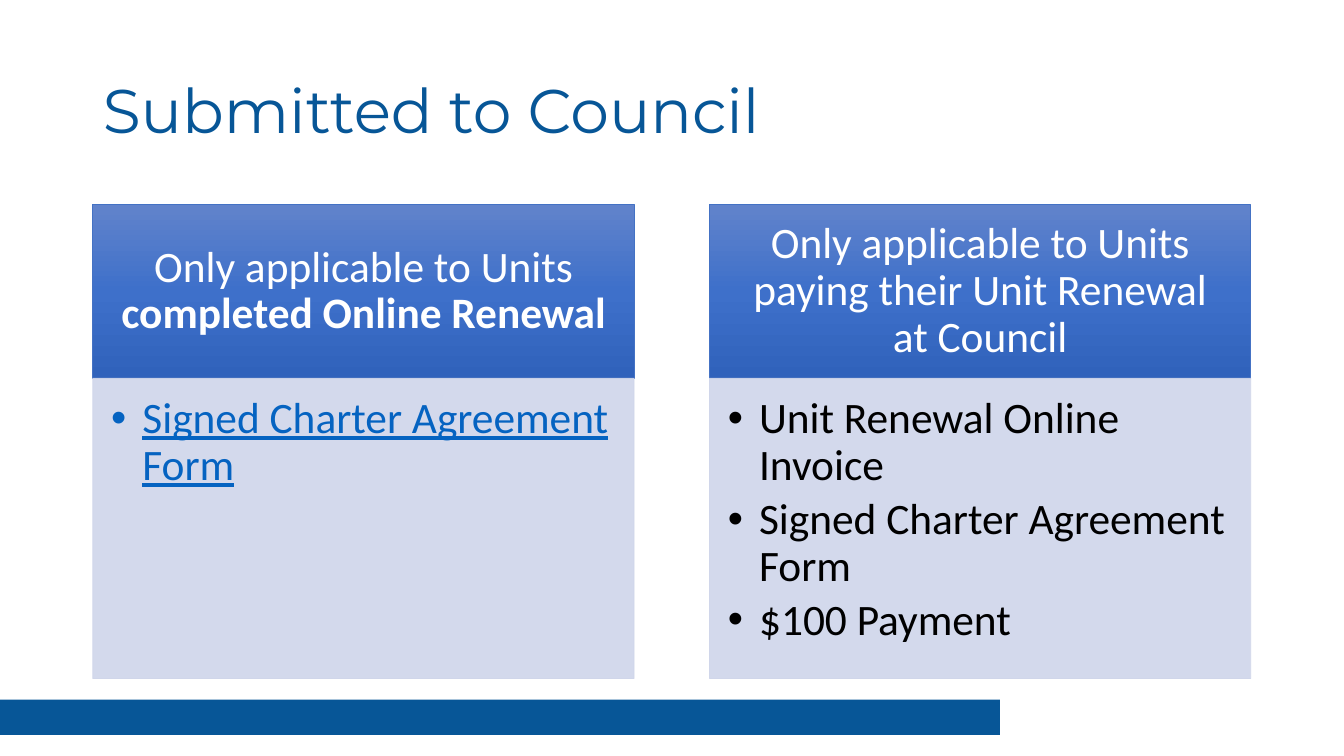
from copy import deepcopy
from dataclasses import dataclass

from lxml import etree
from pptx import Presentation
from pptx import util as u
from pptx.dml.color import RGBColor
from pptx.enum import shapes, text
from pptx.oxml.ns import qn

COLORS = {
    "brand": "075697", "white": "FFFFFF", "black": "000000", "link": "0563C1",
    "head_top": "6183CB", "head_mid": "3E70CA", "head_end": "3062BB",
    "head_line": "4472C4", "panel": "CFD5EA",
}
COLUMN_WIDTH, COLUMN_TOP = 13.64, 5.16
HEAD_HEIGHT, PANEL_HEIGHT = 4.37, 7.57
INDENT = 0.79


@dataclass
class Column:
    left: float
    head_idx: int
    list_idx: int
    heading: str
    items: list[str]
    strong: str = ""
    color: str = "black"
    underline: bool = False


COLUMNS = [
    Column(2.34, 1, 2, "Only applicable to Units ", ["Signed Charter Agreement Form"],
           strong="completed Online Renewal", color="link", underline=True),
    Column(17.88, 3, 4, "Only applicable to Units paying their Unit Renewal at Council",
           ["Unit Renewal Online Invoice", "Signed Charter Agreement Form", "$100 Payment"]),
]


def rgb(name: str) -> RGBColor:
    return RGBColor.from_string(COLORS[name])


def place(sp, left: float, top: float, width: float, height: float) -> None:
    sp.left, sp.top, sp.width, sp.height = map(u.Cm, (left, top, width, height))


def set_frame(tf, anchor, insets: tuple) -> None:
    tf.word_wrap = True
    tf.auto_size = text.MSO_AUTO_SIZE.NONE
    tf.vertical_anchor = anchor
    tf.margin_left, tf.margin_top, tf.margin_right, tf.margin_bottom = map(u.Cm, insets)


def format_paragraph(p, align, color: str, size: int = 31, font: str = "Calibri") -> None:
    p.alignment = align
    p.line_spacing = 0.9
    p.space_before = u.Pt(0)
    for r in p.runs:
        r.font.name, r.font.size = font, u.Pt(size)
        r.font.color.rgb = rgb(color)
        r.font.bold = False


def set_bullet(p) -> None:
    pPr = p._p.get_or_add_pPr()
    pPr.set("marL", str(u.Cm(INDENT)))
    pPr.set("indent", str(-u.Cm(INDENT)))
    etree.SubElement(pPr, qn("a:buFont")).set("typeface", "Arial")
    etree.SubElement(pPr, qn("a:buChar")).set("char", "•")


def fill_heading(sp) -> None:
    sp.fill.gradient()
    sp.fill.gradient_angle = 270
    stops = sp._element.spPr.find(qn("a:gradFill")).find(qn("a:gsLst"))
    stops.insert(1, deepcopy(stops[0]))
    names = ("head_top", "head_mid", "head_end")
    for stop, name, position in zip(sp.fill.gradient_stops, names, (0, 0.5, 1)):
        stop.color.rgb = rgb(name)
        stop.position = position
    sp.line.color.rgb = rgb("head_line")
    sp.line.width = u.Pt(0.5)


def fill_panel(sp) -> None:
    sp.fill.solid()
    sp.fill.fore_color.rgb = rgb("panel")
    sp.line.color.rgb = rgb("panel")
    sp.line.width = u.Pt(0.5)
    for color in sp._element.spPr.iter(qn("a:srgbClr")):
        etree.SubElement(color, qn("a:alpha")).set("val", "90000")


def draw_column(s, column: Column) -> None:
    # Heading
    sp = s.placeholders[column.head_idx]
    place(sp, column.left, COLUMN_TOP, COLUMN_WIDTH, HEAD_HEIGHT)
    fill_heading(sp)
    tf = sp.text_frame
    set_frame(tf, text.MSO_ANCHOR.MIDDLE, (0.61, 0.36, 0.61, 0.36))
    tf.text = column.heading
    p = tf.paragraphs[0]
    if column.strong:
        p.add_run().text = column.strong
    format_paragraph(p, text.PP_ALIGN.CENTER, "white")
    if column.strong:
        p.runs[-1].font.bold = True

    # List
    sp = s.placeholders[column.list_idx]
    place(sp, column.left, COLUMN_TOP + HEAD_HEIGHT, COLUMN_WIDTH, PANEL_HEIGHT)
    fill_panel(sp)
    tf = sp.text_frame
    set_frame(tf, text.MSO_ANCHOR.TOP, (0.46, 0.46, 0.61, 0.69))
    tf.text = "\n".join(column.items)
    for p in tf.paragraphs:
        set_bullet(p)
        format_paragraph(p, text.PP_ALIGN.LEFT, column.color)
        p.space_after = u.Pt(5)
        p.runs[0].font.underline = column.underline


def main() -> None:
    prs = Presentation()
    prs.slide_width, prs.slide_height = u.Cm(33.87), u.Cm(19.05)
    s = prs.slides.add_slide(prs.slide_layouts.get_by_name("Comparison"))

    # Footer bar
    bar = s.shapes.add_shape(shapes.MSO_SHAPE.RECTANGLE, 0, u.Cm(17.63), u.Cm(25.2), u.Cm(0.89))
    bar.shadow.inherit = False
    bar.fill.solid()
    bar.fill.fore_color.rgb = rgb("brand")
    bar.line.fill.background()

    # Title
    title = s.shapes.title
    place(title, 2.34, 1.02, 29.21, 3.68)
    set_frame(title.text_frame, text.MSO_ANCHOR.MIDDLE, (0.25, 0.13, 0.25, 0.13))
    title.text_frame.text = "Submitted to Council"
    format_paragraph(title.text_frame.paragraphs[0], text.PP_ALIGN.LEFT, "brand", 44, "Montserrat")

    # Columns
    for column in COLUMNS:
        draw_column(s, column)

    prs.save("out.pptx")


if __name__ == "__main__":
    main()
